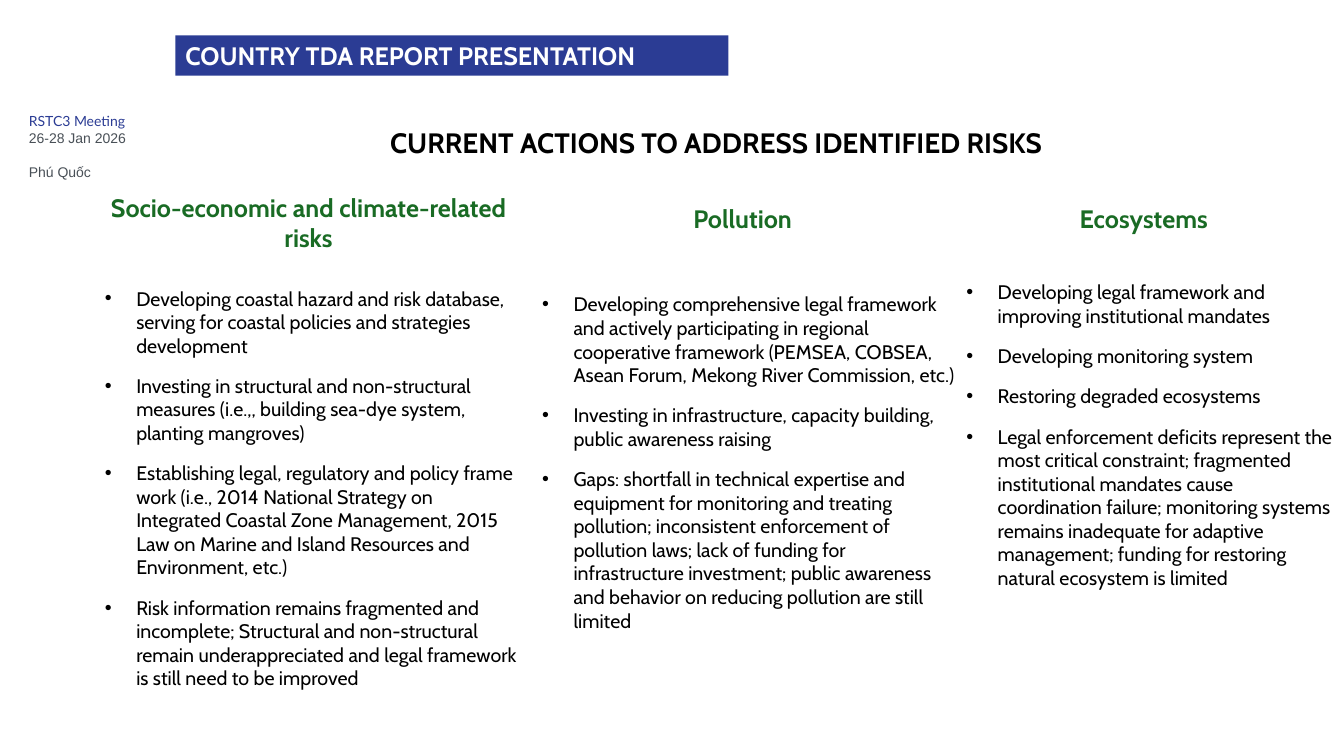
from dataclasses import dataclass

from lxml import etree
from pptx import Presentation
from pptx import util as u
from pptx.dml.color import RGBColor
from pptx.enum import shapes, text
from pptx.oxml import ns


@dataclass(frozen=True)
class Theme:
    blue: str = "2B3C94"
    green: str = "196B24"
    grey: str = "495057"
    black: str = "000000"
    white: str = "FFFFFF"
    face: str = "Cabin"
    title: int = 20
    heading: int = 18
    body: int = 14
    small: int = 10


THEME = Theme()
TITLE = "CURRENT ACTIONS TO ADDRESS IDENTIFIED RISKS"

# Wording, colour, font and space before of each meeting line
MEETING = [
    ("RSTC3 Meeting", THEME.blue, "Lato", 0),
    ("26-28 Jan 2026", THEME.grey, "Arial", 0),
    ("Phú Quốc", THEME.grey, "Arial", 12),
]

# Heading, heading box, list box (left, top, width, height in cm), items
TOPICS = [
    ("Socio-economic and climate-related risks",
     (2.39, 5.11, 10.77, 0.99), (2.39, 7.09, 11.02, 11.38), [
         "Developing coastal hazard and risk database, serving for coastal "
         "policies and strategies development",
         "Investing in structural and non-structural measures (i.e.,, building "
         "sea-dye system, planting mangroves)",
         "Establishing legal, regulatory and policy frame work (i.e., 2014 "
         "National Strategy on Integrated Coastal Zone Management, 2015 Law on "
         "Marine and Island Resources and Environment, etc.)",
         "Risk information remains fragmented and incomplete; Structural and "
         "non-structural remain underappreciated and legal framework is still "
         "need to be improved",
     ]),
    ("Pollution",
     (14.17, 5, 9.09, 0.99), (13.41, 7.24, 11.02, 10.08), [
         "Developing comprehensive legal framework and actively participating "
         "in regional cooperative framework (PEMSEA, COBSEA, Asean Forum, "
         "Mekong River Commission, etc.)",
         "Investing in infrastructure, capacity building, public awareness "
         "raising",
         "Gaps: shortfall in technical expertise and equipment for monitoring "
         "and treating pollution; inconsistent enforcement of pollution laws; "
         "lack of funding for infrastructure investment; public awareness and "
         "behavior on reducing pollution are still limited",
     ]),
    ("Ecosystems",
     (24.28, 5, 9.09, 0.99), (24.1, 6.93, 9.75, 9.45), [
         "Developing legal framework and improving institutional mandates",
         "Developing monitoring system",
         "Restoring degraded ecosystems",
         "Legal enforcement deficits represent the most critical constraint; "
         "fragmented institutional mandates cause coordination failure; "
         "monitoring systems remains inadequate for adaptive management; "
         "funding for restoring natural ecosystem is limited",
     ]),
]


def place(holder, box):
    holder.left, holder.top, holder.width, holder.height = map(u.Cm, box)


def set_frame(frame, anchor):
    frame.word_wrap = True
    frame.auto_size = text.MSO_AUTO_SIZE.NONE
    frame.vertical_anchor = anchor


def set_font(paragraph, size, color, face=THEME.face, bold=False):
    font = paragraph.font
    font.name, font.size, font.bold = face, u.Pt(size), bold
    font.color.rgb = RGBColor.from_string(color)


def add_bullet(paragraph, indent):
    properties = paragraph._p.get_or_add_pPr()
    properties.set("marL", str(indent))
    properties.set("indent", str(-indent))
    etree.SubElement(properties, ns.qn("a:buFont"), typeface="Arial")
    etree.SubElement(properties, ns.qn("a:buChar"), char="•")


def set_title(title):
    place(title, (3.61, 3.02, 28.88, 1.12))
    set_frame(title.text_frame, text.MSO_ANCHOR.MIDDLE)
    title.text_frame.text = TITLE
    heading = title.text_frame.paragraphs[0]
    heading.alignment = text.PP_ALIGN.CENTER
    set_font(heading, THEME.title, THEME.black, bold=True)


def add_label(slide, wording, box, fill, color, align):
    label = slide.shapes.add_shape(shapes.MSO_SHAPE.RECTANGLE, *map(u.Cm, box))
    label.shadow.inherit = False
    label.fill.solid()
    label.fill.fore_color.rgb = RGBColor.from_string(fill)
    label.line.fill.background()
    set_frame(label.text_frame, text.MSO_ANCHOR.MIDDLE)
    label.text_frame.text = wording
    line = label.text_frame.paragraphs[0]
    line.alignment = align
    set_font(line, THEME.heading, color, bold=True)


def add_meeting(slide):
    meeting = slide.shapes.add_textbox(*map(u.Cm, (0.48, 2.72, 3.4, 1.55)))
    frame = meeting.text_frame
    set_frame(frame, text.MSO_ANCHOR.TOP)
    frame.text = "\n".join(line[0] for line in MEETING)
    for paragraph, (_, color, face, before) in zip(frame.paragraphs, MEETING):
        paragraph.space_before = u.Pt(before)
        set_font(paragraph, THEME.small, color, face)


def fill_list(holder, box, items):
    place(holder, box)
    frame = holder.text_frame
    set_frame(frame, text.MSO_ANCHOR.TOP)
    frame.text = "\n".join(items)
    for number, item in enumerate(frame.paragraphs):
        add_bullet(item, u.Cm(0.79))
        item.space_before = u.Pt(6 if number else 0)
        item.space_after = u.Pt(6)
        set_font(item, THEME.body, THEME.black)


def main():
    deck = Presentation()
    deck.slide_width, deck.slide_height = u.Cm(33.87), u.Cm(19.05)
    comparison = deck.slide_layouts[4]
    slide = deck.slides.add_slide(comparison)
    title, *lists, spare = slide.placeholders

    # Banner, title and meeting details
    add_label(slide, "COUNTRY TDA REPORT PRESENTATION",
              (4.42, 0.89, 13.94, 1.02), THEME.blue, THEME.white,
              text.PP_ALIGN.LEFT)
    set_title(title)
    add_meeting(slide)

    # One heading and list per topic
    for holder, (heading, heading_box, list_box, items) in zip(lists, TOPICS):
        fill_list(holder, list_box, items)
        add_label(slide, heading, heading_box, THEME.white, THEME.green,
                  text.PP_ALIGN.CENTER)

    # The layout has one body more than there are topics
    spare.element.getparent().remove(spare.element)
    deck.save("out.pptx")


if __name__ == "__main__":
    main()
